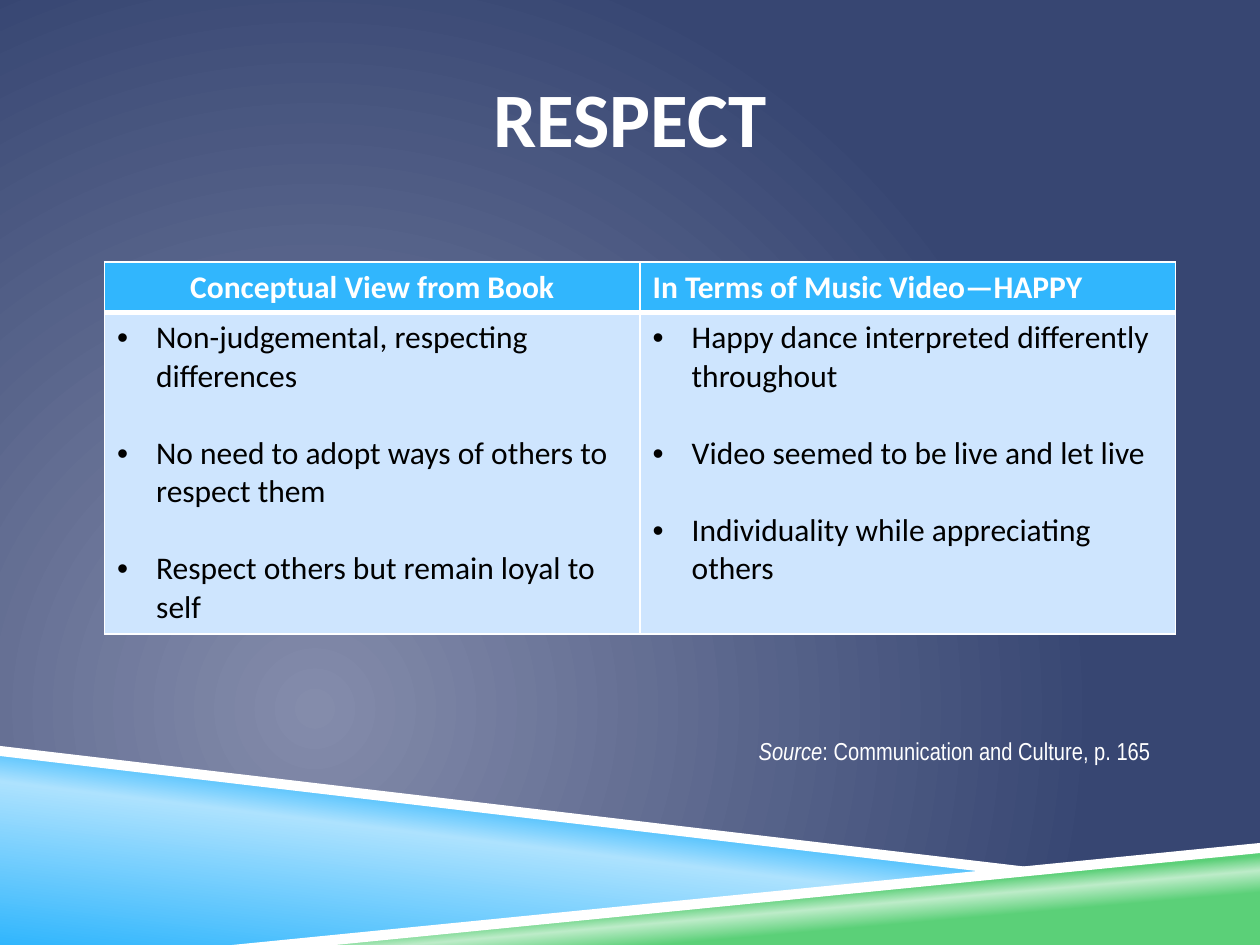
from dataclasses import dataclass

from lxml.etree import SubElement
from pptx import Presentation
from pptx.dml.color import RGBColor
from pptx.enum.text import MSO_ANCHOR, PP_ALIGN
from pptx.oxml.ns import qn
from pptx.util import Inches, Pt


@dataclass(frozen=True)
class Theme:
    white: str = "FFFFFF"
    black: str = "000000"
    blue: str = "31B6FD"
    light_blue: str = "ADE2FE"
    pale_blue: str = "CEE5FE"
    green: str = "5BD078"
    light_green: str = "BDECC9"
    haze: str = "848CAB"
    navy: str = "374672"
    font: str = "Calibri"
    source_font: str = "Arial Narrow"
    title_size: int = 44
    table_size: int = 18
    source_size: int = 14
    bullet_gap: int = 22


THEME = Theme()


@dataclass(frozen=True)
class Band:
    points: list[tuple[float, float]]
    stops: list[tuple[int, str]]
    angle: int = 0


@dataclass(frozen=True)
class Column:
    heading: str
    alignment: PP_ALIGN
    bullets: list[str]


BANDS = [
    Band([(0, 5.97), (7.92, 6.92), (2, 7.5), (0, 7.5)],
         [(0, THEME.blue), (52, THEME.light_blue), (66, THEME.blue)], 277),
    Band([(1.98, 7.5), (10, 6.72), (10, 7.5)],
         [(28, THEME.green), (40, THEME.light_green), (48, THEME.green)], 265),
    Band([(0, 5.92), (0, 6), (7.9, 6.93), (8.32, 6.9)], [(0, THEME.white)]),
    Band([(10, 6.69), (1.84, 7.5), (2.66, 7.5), (10, 6.77)], [(0, THEME.white)]),
]

COLUMNS = [
    Column("Conceptual View from Book", PP_ALIGN.CENTER, [
        "Non-judgemental, respecting differences",
        "No need to adopt ways of others to respect them",
        "Respect others but remain loyal to self",
    ]),
    Column("In Terms of Music Video—HAPPY", PP_ALIGN.LEFT, [
        "Happy dance interpreted differently throughout",
        "Video seemed to be live and let live",
        "Individuality while appreciating others",
    ]),
]


def add_text(para, text: str, *, size: int, color: str = THEME.white,
             font: str = THEME.font, bold: bool = False, italic: bool = False) -> None:
    span = para.add_run()
    span.text = text
    span.font.name = font
    span.font.size = Pt(size)
    span.font.bold = bold
    span.font.italic = italic
    span.font.color.rgb = RGBColor.from_string(color)


def add_box(slide, left: float, top: float, width: float, height: float):
    box = slide.shapes.add_textbox(Inches(left), Inches(top), Inches(width), Inches(height))
    box.text_frame.word_wrap = True
    return box.text_frame


def set_gradient(owner, fill, stops: list[tuple[int, str]]):
    """Turn a fill into a gradient with the given stops, and return its element."""
    fill.solid()
    solid = next(owner.iter(qn("a:solidFill")))
    parent = solid.getparent()
    gradient = SubElement(parent, qn("a:gradFill"), rotWithShape="1")
    parent.replace(solid, gradient)
    stop_list = SubElement(gradient, qn("a:gsLst"))
    for position, color in stops:
        stop = SubElement(stop_list, qn("a:gs"), pos=str(position * 1000))
        SubElement(stop, qn("a:srgbClr"), val=color)
    return gradient


def paint_background(slide) -> None:
    gradient = set_gradient(slide.element, slide.background.fill,
                            [(0, THEME.haze), (100, THEME.navy)])
    circle = SubElement(gradient, qn("a:path"), path="circle")
    SubElement(circle, qn("a:fillToRect"), l="50000", t="100000", r="100000", b="50000")


def draw_band(slide, band: Band) -> None:
    start, *rest = [(Inches(x), Inches(y)) for x, y in band.points]
    builder = slide.shapes.build_freeform(*start)
    builder.add_line_segments(rest, close=True)
    shape = builder.convert_to_shape()
    shape.shadow.inherit = False
    shape.line.fill.background()
    if len(band.stops) > 1:
        gradient = set_gradient(shape.element.spPr, shape.fill, band.stops)
        SubElement(gradient, qn("a:lin"), ang=str(band.angle * 60000), scaled="0")
    else:
        shape.fill.solid()
        shape.fill.fore_color.rgb = RGBColor.from_string(band.stops[0][1])


def style_cell(cell, color: str, *, top: int = 1, bottom: int = 1) -> None:
    properties = cell._tc.get_or_add_tcPr()
    for side, width in (("L", 1), ("R", 1), ("T", top), ("B", bottom)):
        line = SubElement(properties, qn(f"a:ln{side}"), w=str(Pt(width)))
        SubElement(SubElement(line, qn("a:solidFill")), qn("a:srgbClr"), val=THEME.white)
    cell.fill.solid()
    cell.fill.fore_color.rgb = RGBColor.from_string(color)


def make_bullet(para) -> None:
    properties = para._p.get_or_add_pPr()
    properties.set("marL", str(Inches(0.31)))
    properties.set("indent", str(-Inches(0.31)))
    SubElement(properties, qn("a:buFont"), typeface="Arial")
    SubElement(properties, qn("a:buChar"), char="•")


def fill_column(header, body, column: Column) -> None:
    style_cell(header, THEME.blue, bottom=3)
    para = header.text_frame.paragraphs[0]
    para.alignment = column.alignment
    add_text(para, column.heading, size=THEME.table_size, bold=True)

    style_cell(body, THEME.pale_blue, top=3)
    frame = body.text_frame
    for index, bullet in enumerate(column.bullets):
        para = frame.add_paragraph() if index else frame.paragraphs[0]
        if index:
            para.space_before = Pt(THEME.bullet_gap)
        make_bullet(para)
        add_text(para, bullet, size=THEME.table_size, color=THEME.black)


def main() -> None:
    deck = Presentation()
    deck.slide_width, deck.slide_height = Inches(10), Inches(7.5)
    slide = deck.slides.add_slide(deck.slide_layouts[6])

    # Background and bottom bands
    paint_background(slide)
    for band in BANDS:
        draw_band(slide, band)

    # Title
    frame = add_box(slide, 0.75, 0.3, 8.5, 1.25)
    frame.margin_left = frame.margin_right = 0
    frame.vertical_anchor = MSO_ANCHOR.MIDDLE
    para = frame.paragraphs[0]
    para.alignment = PP_ALIGN.CENTER
    add_text(para, "RESPECT", size=THEME.title_size, bold=True)

    # Comparison table
    table = slide.shapes.add_table(2, len(COLUMNS), Inches(0.83), Inches(2.08),
                                   Inches(8.5), Inches(2.95)).table
    table.rows[0].height, table.rows[1].height = Inches(0.4), Inches(2.55)
    for index, column in enumerate(COLUMNS):
        fill_column(table.cell(0, index), table.cell(1, index), column)

    # Source line
    para = add_box(slide, 3.58, 5.79, 5.65, 0.34).paragraphs[0]
    para.alignment = PP_ALIGN.RIGHT
    source_format = {"size": THEME.source_size, "font": THEME.source_font}
    add_text(para, "Source", italic=True, **source_format)
    add_text(para, ": Communication and Culture, p. 165", **source_format)

    deck.save("out.pptx")


if __name__ == "__main__":
    main()
